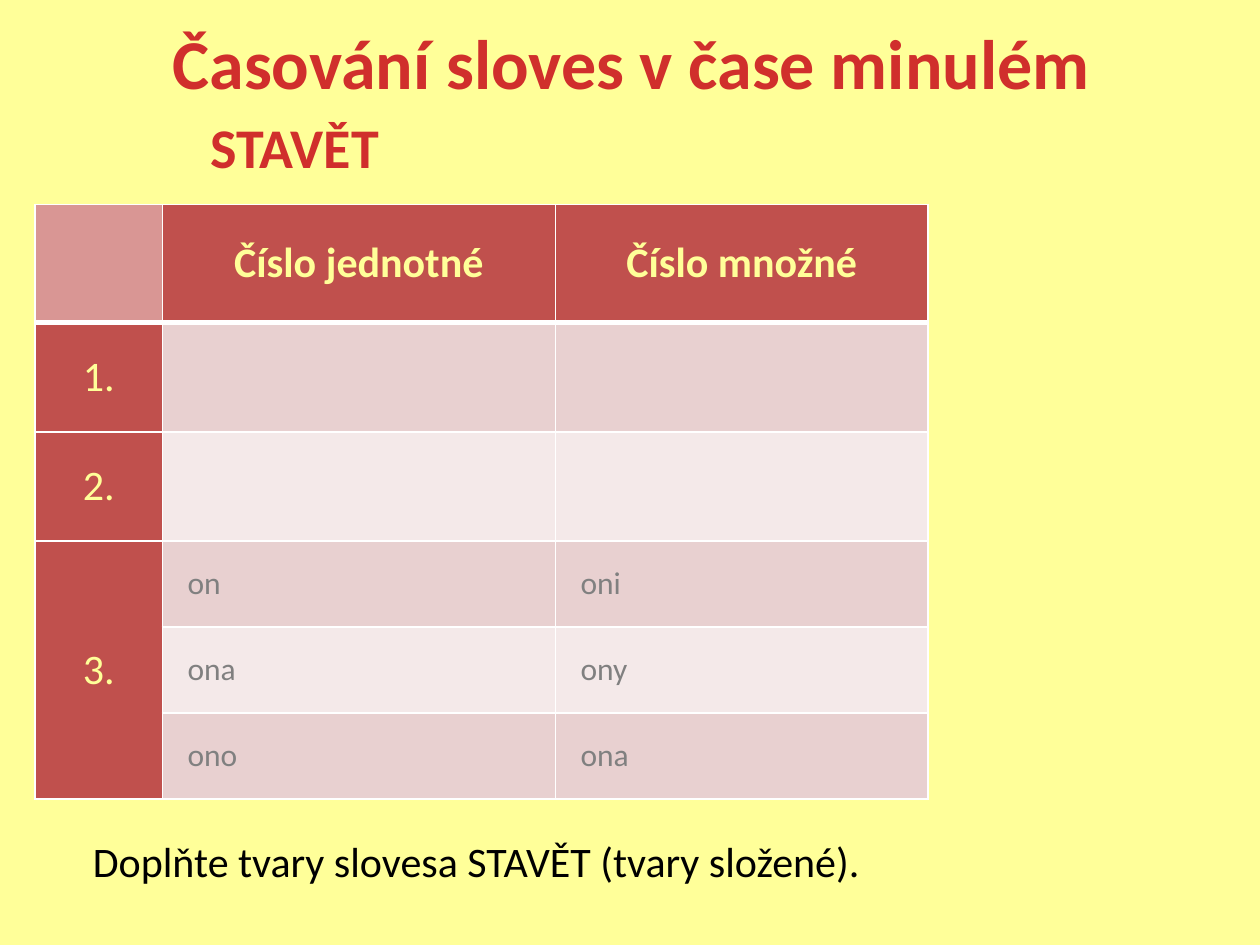
"""Build a Czech grammar slide with a past-tense conjugation table to fill in."""
from lxml.etree import SubElement
from pptx import Presentation
from pptx.dml.color import RGBColor
from pptx.enum.text import MSO_ANCHOR, MSO_AUTO_SIZE, PP_ALIGN
from pptx.oxml.ns import qn
from pptx.util import Pt

THEME = {
    "font": "Calibri",
    "page": "FFFF99", "accent": "D02F2C", "ink": "000000", "pronoun": "808080",
    "head": "C0504D", "corner": "D99694", "bands": ("E8D0D0", "F4E9E9"),
    "rule": "FFFFFF",
    "title_size": 40, "verb_size": 32, "text_size": 24, "pronoun_size": 18,
}


def write(frame, words, size, color, bold=False, align=PP_ALIGN.LEFT):
    paragraph = frame.paragraphs[0]
    paragraph.alignment = align
    run = paragraph.add_run()
    run.text = words
    style = {"name": THEME["font"], "size": Pt(THEME[size]), "bold": bold}
    for key, value in style.items():
        setattr(run.font, key, value)
    run.font.color.rgb = RGBColor.from_string(THEME[color])


def draw_borders(cell, widths):
    properties = cell._tc.get_or_add_tcPr()
    for position, (side, width) in enumerate(widths.items()):
        line = SubElement(properties, qn(f"a:ln{side}"), w=str(Pt(width)))
        fill = SubElement(line, qn("a:solidFill"))
        SubElement(fill, qn("a:srgbClr"), val=THEME["rule"])
        properties.insert(position, line)


deck = Presentation()
deck.slide_width, deck.slide_height = Pt(720), Pt(540)
slide = deck.slides.add_slide(deck.slide_layouts[1])
slide.background.fill.solid()
slide.background.fill.fore_color.rgb = RGBColor.from_string(THEME["page"])

heading, verb = slide.placeholders
instruction = slide.shapes.add_textbox(Pt(46), Pt(473.8), Pt(612), Pt(36))
places = (
    (heading, {"left": 36.7, "top": 1.4, "width": 648, "height": 67}),
    (verb, {"left": 41, "top": 60.5, "width": 648, "height": 399.6}),
)
for part, place in places:
    for key, value in place.items():
        setattr(part, key, Pt(value))

heading.text_frame.vertical_anchor = MSO_ANCHOR.MIDDLE
write(heading.text_frame, "Časování sloves v čase minulém", "title_size", "accent",
      True, PP_ALIGN.CENTER)

write(verb.text_frame, "STAVĚT", "verb_size", "accent", True)
verb_properties = verb.text_frame.paragraphs[0]._p.get_or_add_pPr()
for key, value in {"marL": Pt(72), "indent": 0}.items():
    verb_properties.set(key, str(value))
SubElement(verb_properties, qn("a:buNone"))

instruction.text_frame.word_wrap = True
instruction.text_frame.auto_size = MSO_AUTO_SIZE.SHAPE_TO_FIT_TEXT
write(instruction.text_frame, "Doplňte tvary slovesa STAVĚT (tvary složené).",
      "text_size", "ink")

forms = (
    ("", "Číslo jednotné", "Číslo množné"),
    ("1.", "", ""),
    ("2.", "", ""),
    ("3.", "on", "oni"),
    ("", "ona", "ony"),
    ("", "ono", "ona"),
)
column_widths = (72.8, 224.6, 213)
row_heights = (67.6, 62.4, 62.4, 49.2, 49.2, 49.2)
conjugation = slide.shapes.add_table(
    len(row_heights), len(column_widths), Pt(20), Pt(116.8),
    Pt(sum(column_widths)), Pt(sum(row_heights))).table
for column, width in zip(conjugation.columns, column_widths):
    column.width = Pt(width)
for row, height in zip(conjugation.rows, row_heights):
    row.height = Pt(height)
conjugation.cell(3, 0).merge(conjugation.cell(5, 0))

for r, row_forms in enumerate(forms):
    for c, form in enumerate(row_forms):
        cell = conjugation.cell(r, c)
        is_head = r == 0 or c == 0
        color = THEME["head"] if is_head else THEME["bands"][(r - 1) % 2]
        if r == c == 0:
            color = THEME["corner"]
        cell.fill.solid()
        cell.fill.fore_color.rgb = RGBColor.from_string(color)
        cell.vertical_anchor = MSO_ANCHOR.MIDDLE
        draw_borders(cell, {"L": 1, "R": 1, "T": 3 if r == 1 else 1,
                            "B": 3 if r == 0 else 1})
        if form and is_head:
            write(cell.text_frame, form, "text_size", "page", r == 0, PP_ALIGN.CENTER)
        elif form:
            cell.margin_left = Pt(14.4)
            write(cell.text_frame, form, "pronoun_size", "pronoun")

deck.save("out.pptx")
